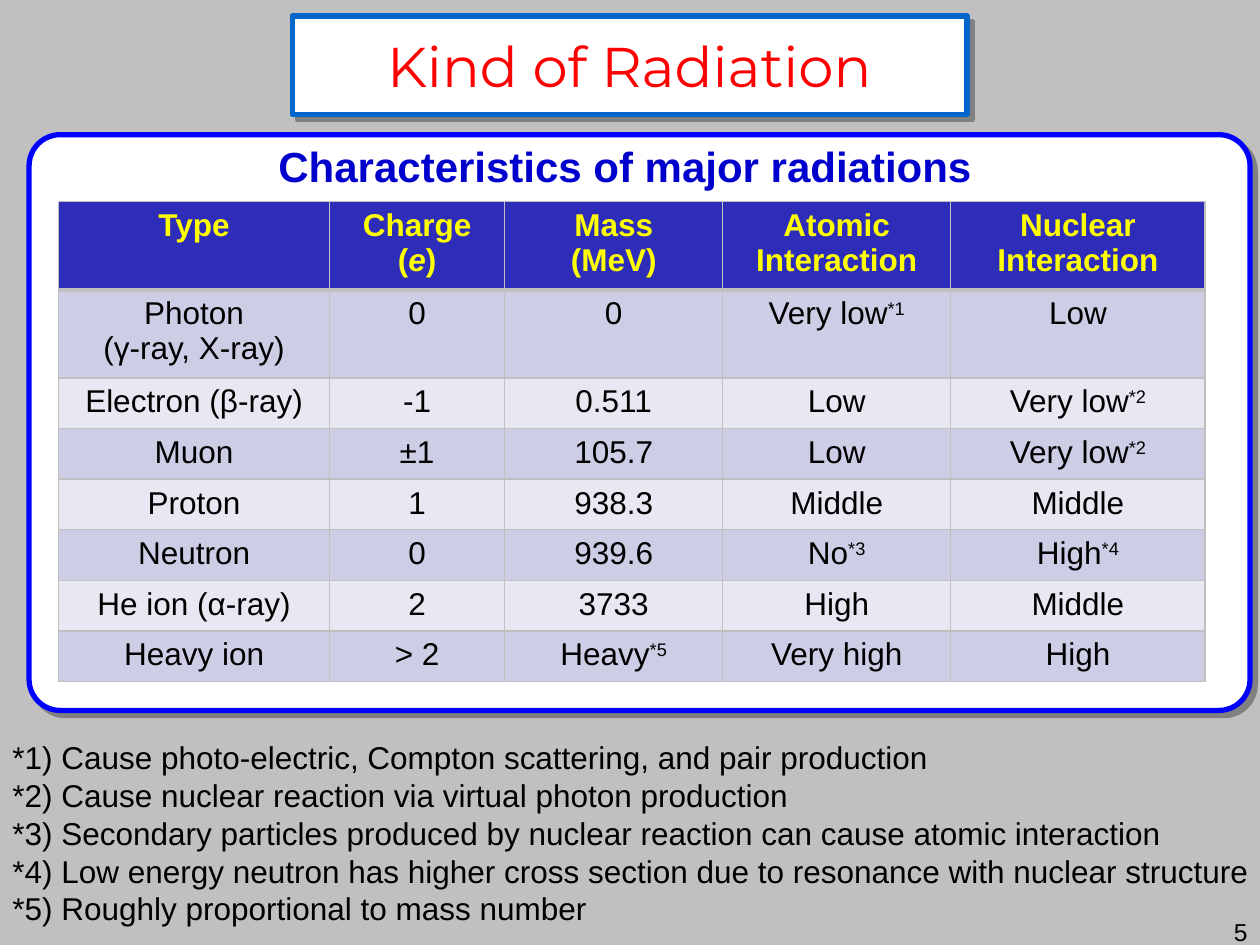
from lxml import etree
from pptx import Presentation
from pptx.dml.color import RGBColor
from pptx.enum import shapes, text
from pptx.oxml import parse_xml
from pptx.util import Pt

NS = "http://schemas.openxmlformats.org/drawingml/2006/main"
HUES = dict(back="C0C0C0", white="FFFFFF", black="000000", red="FF0000",
            rim="0066CC", blue="0000FF", navy="0000CC", yellow="FFFF00",
            head="2D2DB9", dark="CDCDE6", light="E8E8F3", shade="808080")
SIDES = dict(l=text.PP_ALIGN.LEFT, c=text.PP_ALIGN.CENTER, r=text.PP_ALIGN.RIGHT)

TITLE = "Kind of Radiation"
CAPTION = "Characteristics of major radiations"
PAGE = "5"
ROWS = [
    ("Type", "Charge\n(|i:e|)", "Mass\n(MeV)", "Atomic Interaction", "Nuclear Interaction"),
    ("Photon\n(γ-ray, X-ray)", "0", "0", "Very low|s:*1", "Low"),
    ("Electron (β-ray)", "-1", "0.511", "Low", "Very low|s:*2"),
    ("Muon", "±1", "105.7", "Low", "Very low|s:*2"),
    ("Proton", "1", "938.3", "Middle", "Middle"),
    ("Neutron", "0", "939.6", "No|s:*3", "High|s:*4"),
    ("He ion (α-ray)", "2", "3733", "High", "Middle"),
    ("Heavy ion", "> 2", "Heavy|s:*5", "Very high", "High"),
]
NOTES = [
    "Cause photo-electric, Compton scattering, and pair production",
    "Cause nuclear reaction via virtual photon production",
    "Secondary particles produced by nuclear reaction can cause atomic interaction",
    "Low energy neutron has higher cross section due to resonance with nuclear structure",
    "Roughly proportional to mass number",
]
WIDTHS = [154.8, 100.1, 124.6, 130.3, 145.4]
TALL, SHORT = 50.4, 28.9


def rgb(name):
    return RGBColor.from_string(HUES[name])


def write(frame, words, size=18, face="Arial", hue="black", bold=False,
          side="c", gap=None):
    for n, line in enumerate(words.split("\n")):
        para = frame.paragraphs[0] if n == 0 else frame.add_paragraph()
        para.alignment = SIDES[side]
        if gap:
            para.line_spacing = gap
        for part in line.split("|"):
            run = para.add_run()
            mark = part[:2] if part[:2] in ("i:", "s:") else ""
            run.text = part[len(mark):]
            font = run.font
            font.size, font.name, font.bold = Pt(size), face, bold
            font.color.rgb = rgb(hue)
            if mark == "i:":
                font.italic = True
            elif mark == "s:":
                run._r.get_or_add_rPr().set("baseline", "30000")


def place(shape, *box):
    shape.left, shape.top, shape.width, shape.height = map(Pt, box)


def frame_up(shape, rim):
    shape.fill.solid()
    shape.fill.fore_color.rgb = rgb("white")
    shape.line.color.rgb = rgb(rim)
    shape.line.width = Pt(3)
    shape.shadow.inherit = False
    glow = shape._element.spPr.find(f"{{{NS}}}effectLst")
    glow.append(parse_xml(
        f'<a:outerShdw xmlns:a="{NS}" dist="53340" dir="2700000" algn="ctr" '
        f'rotWithShape="0"><a:srgbClr val="{HUES["shade"]}"/></a:outerShdw>'))


def label(words, box, wrap=True, **form):
    note = slide.shapes.add_textbox(*map(Pt, box))
    note.text_frame.word_wrap = wrap
    write(note.text_frame, words, **form)


def border(cell, low):
    props = cell._tc.get_or_add_tcPr()
    for n, (tag, wide) in enumerate((("lnL", 1), ("lnR", 1), ("lnT", 1), ("lnB", low))):
        line = etree.Element(f"{{{NS}}}{tag}", w=str(Pt(wide)))
        fill = etree.SubElement(line, f"{{{NS}}}solidFill")
        etree.SubElement(fill, f"{{{NS}}}srgbClr", val=HUES["back"])
        props.insert(n, line)


deck = Presentation()
deck.slide_width, deck.slide_height = Pt(720), Pt(540)
slide = deck.slides.add_slide(deck.slide_layouts[5])
slide.background.fill.solid()
slide.background.fill.fore_color.rgb = rgb("back")

title = slide.shapes.title
place(title, 167, 9.2, 385.6, 56.2)
title._element.spPr.append(parse_xml(
    f'<a:prstGeom xmlns:a="{NS}" prst="roundRect"><a:avLst>'
    '<a:gd name="adj" fmla="val 8100"/></a:avLst></a:prstGeom>'))
frame_up(title, "rim")
title.text_frame.vertical_anchor = text.MSO_ANCHOR.MIDDLE
write(title.text_frame, TITLE, size=32, face="Montserrat", hue="red")

panel = slide.shapes.add_shape(shapes.MSO_SHAPE.ROUNDED_RECTANGLE,
                               *map(Pt, (16.6, 77, 697.7, 329)))
panel.adjustments[0] = 0.054
frame_up(panel, "blue")
label(CAPTION, (149.8, 77, 414.7, 36), wrap=False, size=24, hue="navy", bold=True)

highs = [TALL] * 2 + [SHORT] * (len(ROWS) - 2)
grid = slide.shapes.add_table(len(ROWS), len(WIDTHS), Pt(33.5), Pt(115.2),
                              Pt(sum(WIDTHS)), Pt(sum(highs))).table
for col, wide in zip(grid.columns, WIDTHS):
    col.width = Pt(wide)
for r, (row, high) in enumerate(zip(ROWS, highs)):
    grid.rows[r].height = Pt(high)
    for c, words in enumerate(row):
        cell = grid.cell(r, c)
        cell.fill.solid()
        cell.fill.fore_color.rgb = rgb("head" if r == 0 else ("light", "dark")[r % 2])
        border(cell, 1 if r else 3)
        write(cell.text_frame, words, hue="black" if r else "yellow", bold=r == 0)

label("\n".join(f"*{n}) {note}" for n, note in enumerate(NOTES, 1)),
      (0, 418.3, 737.3, 116.6), wrap=False, side="l")
label(PAGE, (681.1, 520.6, 38.9, 19.4), size=14, side="r")
deck.save("out.pptx")
